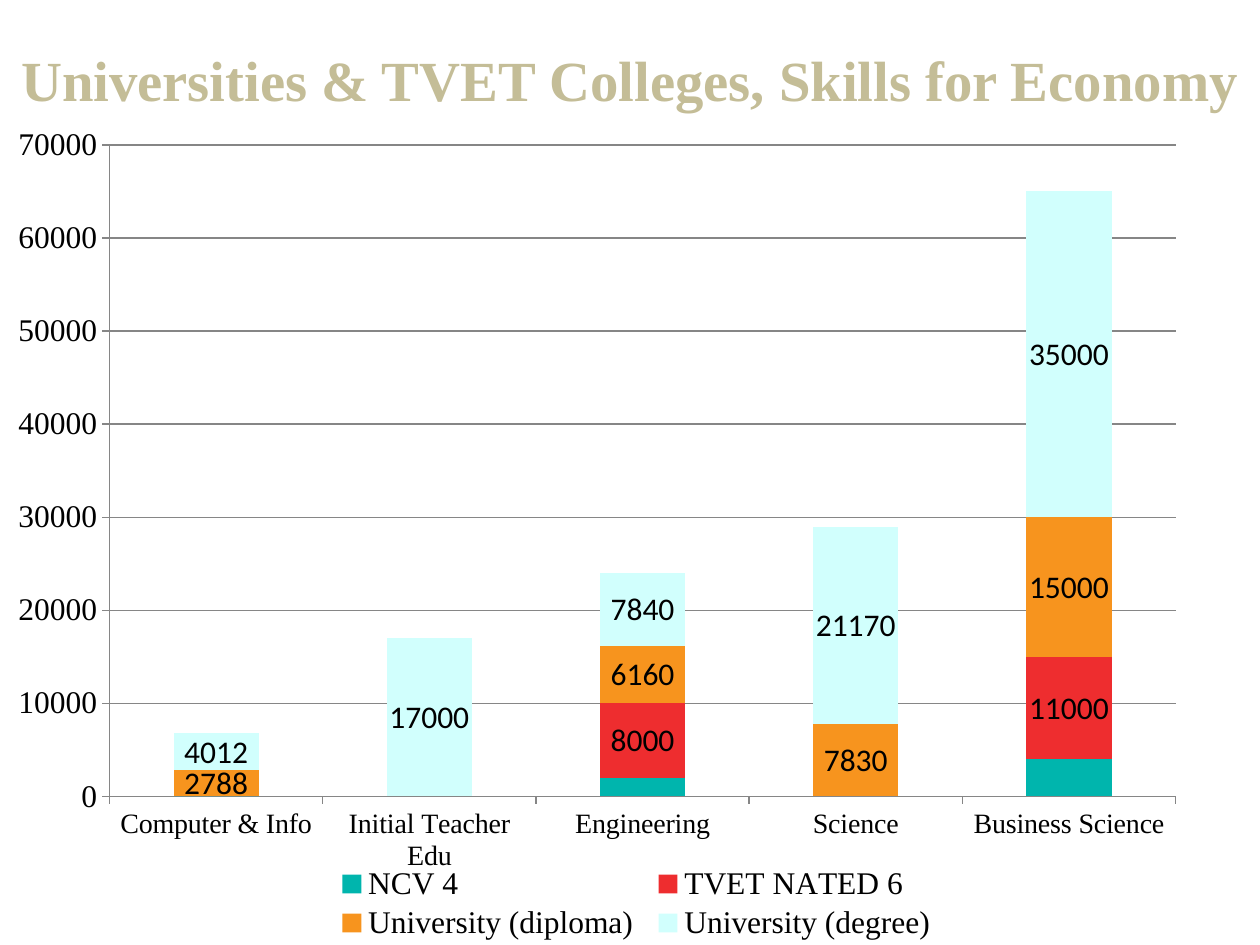
from lxml import etree
from pptx import Presentation
from pptx.chart.data import CategoryChartData
from pptx.dml.color import RGBColor
from pptx.enum.chart import XL_CHART_TYPE, XL_LABEL_POSITION, XL_LEGEND_POSITION, XL_TICK_MARK
from pptx.enum.text import MSO_ANCHOR, PP_ALIGN
from pptx.oxml.ns import qn
from pptx.util import Pt

STACKED = XL_CHART_TYPE.COLUMN_STACKED
CENTER_LABEL = XL_LABEL_POSITION.CENTER
BOTTOM = XL_LEGEND_POSITION.BOTTOM
OUTSIDE = XL_TICK_MARK.OUTSIDE
MIDDLE = MSO_ANCHOR.MIDDLE
CENTER = PP_ALIGN.CENTER

SERIF, SANS = "Times New Roman", "Calibri"
BLACK, GRAY, TAN = "000000", "868686", "C4BD97"

TITLE = "Universities & TVET Colleges, Skills for Economy"
FIELDS = ["Computer & Info", "Initial Teacher Edu", "Engineering", "Science", "Business Science"]
QUALIFICATIONS = [
    ("NCV 4", [0, None, 2000, None, 4000], "00B5AD", False),
    ("TVET NATED 6", [None, None, 8000, None, 11000], "EE2D2F", True),
    ("University (diploma)", [2788, None, 6160, 7830, 15000], "F7941E", True),
    ("University (degree)", [4012, 17000, 7840, 21170, 35000], "D1FFFD", True),
]
PLOT_AREA = {"layoutTarget": "inner", "xMode": "edge", "yMode": "edge",
             "x": 0.087, "y": 0.035, "w": 0.846, "h": 0.786}
LEGEND_AREA = {"xMode": "edge", "yMode": "edge", "x": 0.26, "y": 0.9, "w": 0.49, "h": 0.1}


def color(value):
    return RGBColor.from_string(value)


def style_font(font, size, name=SERIF, fill=BLACK, bold=False):
    font.size, font.name, font.bold = Pt(size), name, bold
    font.color.rgb = color(fill)


def add_text(slide, text, left, top, width, height, **style):
    box = slide.shapes.add_textbox(Pt(left), Pt(top), Pt(width), Pt(height))
    frame = box.text_frame
    frame.word_wrap = True
    frame.vertical_anchor = MIDDLE
    frame.margin_left = frame.margin_right = 0
    paragraph = frame.paragraphs[0]
    paragraph.alignment = CENTER
    run = paragraph.add_run()
    run.text = text
    style_font(run.font, **style)


def set_layout(parent, position, area):
    for old in parent.findall(qn("c:layout")):
        parent.remove(old)
    layout = etree.Element(qn("c:layout"))
    manual = etree.SubElement(layout, qn("c:manualLayout"))
    for key, value in area.items():
        etree.SubElement(manual, qn(f"c:{key}")).set("val", str(value))
    parent.insert(position, layout)


def add_skills_chart(slide, left, top, width, height):
    data = CategoryChartData()
    data.categories = FIELDS
    for name, values, _, _ in QUALIFICATIONS:
        data.add_series(name, values)
    chart = slide.shapes.add_chart(STACKED, Pt(left), Pt(top), Pt(width), Pt(height), data).chart
    chart.has_title = False
    style_font(chart.font, 18, name=SANS)

    plot = chart.plots[0]
    plot.gap_width, plot.overlap, plot.vary_by_categories = 150, 100, False
    for series, (_, _, fill, labelled) in zip(plot.series, QUALIFICATIONS):
        series.format.fill.solid()
        series.format.fill.fore_color.rgb = color(fill)
        if labelled:
            labels = series.data_labels
            labels.show_value = True
            labels.position = CENTER_LABEL
            style_font(labels.font, 18, name=SANS)

    for axis, size in ((chart.category_axis, 16), (chart.value_axis, 18)):
        axis.major_tick_mark = OUTSIDE
        axis.format.line.color.rgb = color(GRAY)
        style_font(axis.tick_labels.font, size)
    amounts = chart.value_axis
    amounts.minimum_scale, amounts.maximum_scale, amounts.major_unit = 0, 70000, 10000
    amounts.has_major_gridlines = True
    amounts.major_gridlines.format.line.color.rgb = color(GRAY)

    chart.has_legend = True
    legend = chart.legend
    legend.position = BOTTOM
    legend.include_in_layout = False
    style_font(legend.font, 18)

    root = chart.element
    set_layout(root.find(".//" + qn("c:plotArea")), 0, PLOT_AREA)
    set_layout(root.find(".//" + qn("c:legend")), 1, LEGEND_AREA)


def main():
    deck = Presentation()
    deck.slide_width, deck.slide_height = Pt(720), Pt(540)
    slide = deck.slides.add_slide(deck.slide_layouts[6])
    add_text(slide, TITLE, 0, 0, 720, 90, size=32.4, fill=TAN, bold=True)
    add_skills_chart(slide, 0, 66.24, 720, 473.76)
    deck.save("out.pptx")


if __name__ == "__main__":
    main()
